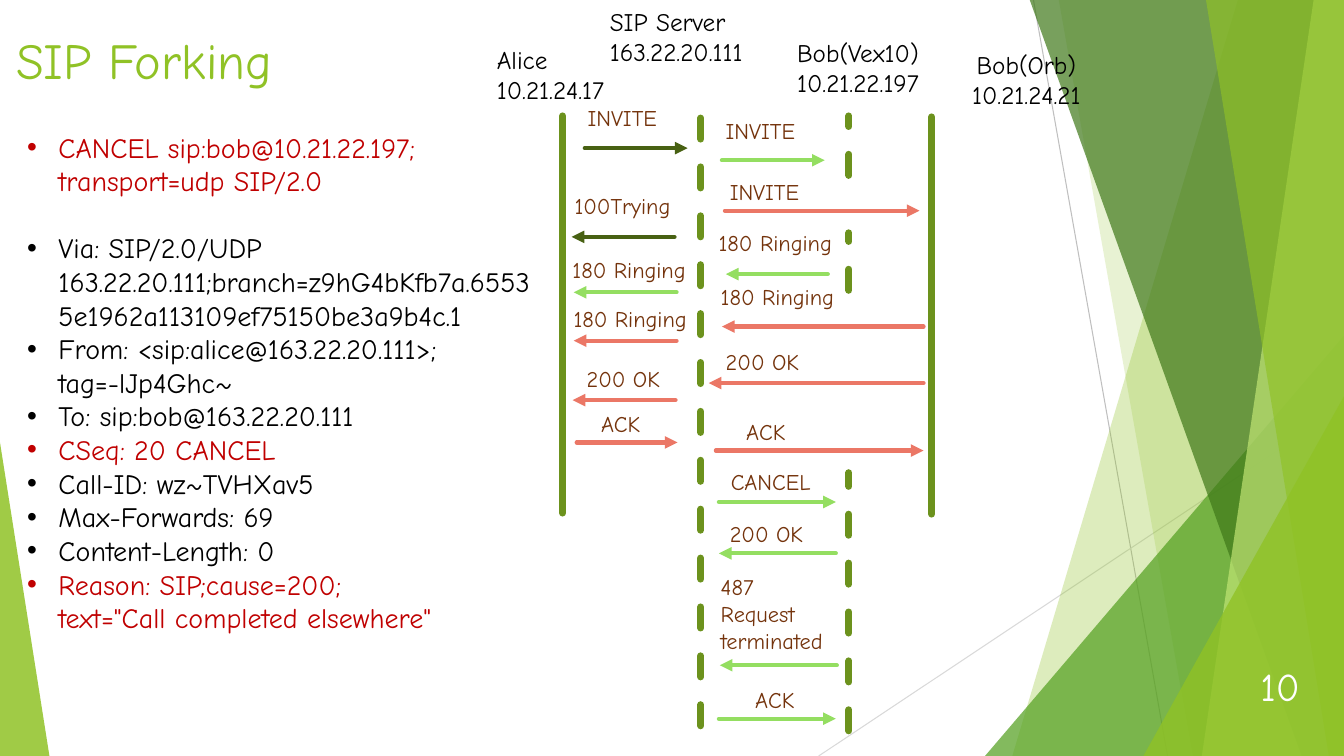
from dataclasses import dataclass

from lxml import etree
from pptx import Presentation
from pptx import util as u
from pptx.dml.color import RGBColor
from pptx.enum import dml, shapes, text
from pptx.oxml.ns import qn

PX = 9144  # EMU in one px: 100 px make an inch
SLIDE_W, SLIDE_H = 1333, 750
LEFT, CENTER, RIGHT = text.PP_ALIGN.LEFT, text.PP_ALIGN.CENTER, text.PP_ALIGN.RIGHT


@dataclass(frozen=True)
class Theme:
    font: str = "Comic Neue"
    lime: str = "90C226"
    pale_lime: str = "C0E474"
    green: str = "54A021"
    deep_green: str = "3F7819"
    gray: str = "BFBFBF"
    light_gray: str = "D9D9D9"
    lifeline: str = "6C921D"
    caller: str = "486113"
    vex: str = "94DE61"
    orb: str = "EB7766"
    label: str = "74330C"
    ink: str = "000000"
    red: str = "C00000"
    white: str = "FFFFFF"
    title_pt: int = 36
    number_pt: int = 28
    list_pt: int = 20
    party_pt: int = 18
    label_pt: int = 16


T = Theme()


@dataclass(frozen=True)
class Band:
    """Facet reaching from a slanted left edge to the right slide edge."""
    top_x: int
    bottom_x: int
    color: str
    opacity: int


@dataclass(frozen=True)
class Corner:
    """Right triangle standing on the bottom slide edge."""
    left: int
    top: int
    width: int
    apex: int
    color: str
    opacity: int


@dataclass(frozen=True)
class Lifeline:
    x: int
    bottom: int
    top: int
    dashed: bool = False


@dataclass(frozen=True)
class Party:
    name: str
    left: int
    top: int
    width: int
    align: text.PP_ALIGN = LEFT


@dataclass(frozen=True)
class Message:
    label: str
    left: int
    top: int
    width: int
    start: int
    end: int
    y: int
    color: str
    align: text.PP_ALIGN = LEFT


@dataclass(frozen=True)
class Header:
    content: str
    color: str = T.ink
    gap_pt: int = 0


FACETS = [
    Band(1228, 1004, T.lime, 30),
    Band(1050, 1183, T.lime, 20),
    Corner(977, 333, 356, 1, T.green, 72),
    Band(1021, 1291, T.deep_green, 70),
    Band(1303, 1192, T.pale_lime, 70),
    Band(1196, 1318, T.lime, 65),
    Corner(1134, 393, 199, 1, T.lime, 80),
    Corner(0, 439, 49, 0, T.lime, 85),
]
LIFELINES = [
    Lifeline(558, 509, 115),
    Lifeline(695, 720, 110, True),
    Lifeline(842, 174, 115, True),
    Lifeline(842, 288, 231, True),
    Lifeline(842, 725, 469, True),
    Lifeline(924, 510, 116),
]
PARTIES = [
    Party("Alice\n10.21.24.17", 483, 39, 170),
    Party("SIP Server\n163.22.20.111", 595, 1, 218),
    Party("Bob(Vex10)\n10.21.22.197", 766, 32, 170, CENTER),
    Party("Bob(Orb)\n10.21.24.21", 943, 44, 150, CENTER),
]
MESSAGES = [
    # Between Alice and the server
    Message("INVITE", 573, 98, 116, 580, 682, 147, T.caller),
    Message("100Trying", 560, 186, 125, 669, 567, 235, T.caller),
    Message("180 Ringing", 558, 249, 153, 671, 569, 290, T.vex),
    Message("180 Ringing", 559, 298, 153, 671, 569, 338, T.orb),
    Message("200 OK", 572, 357, 112, 670, 568, 397, T.orb),
    Message("ACK", 568, 402, 95, 572, 672, 439, T.orb, CENTER),
    # Between the server and Bob's two devices
    Message("INVITE", 710, 111, 116, 716, 818, 159, T.vex),
    Message("INVITE", 714, 172, 116, 719, 912, 209, T.orb),
    Message("180 Ringing", 703, 222, 153, 821, 720, 272, T.vex),
    Message("180 Ringing", 705, 276, 151, 916, 716, 324, T.orb),
    Message("200 OK", 710, 340, 153, 916, 703, 380, T.orb),
    Message("ACK", 706, 410, 107, 710, 916, 447, T.orb, CENTER),
    Message("CANCEL", 715, 460, 107, 713, 829, 498, T.vex),
    Message("200 OK", 714, 511, 116, 829, 713, 549, T.vex),
    Message("487\nRequest\nterminated", 705, 564, 141, 830, 714, 660, T.vex),
    Message("ACK", 715, 676, 107, 713, 829, 713, T.vex, CENTER),
]
HEADERS = [
    Header("CANCEL sip:bob@10.21.22.197;\vtransport=udp SIP/2.0", T.red),
    Header("Via: SIP/2.0/UDP 163.22.20.111;branch=z9hG4bKfb7a.65535e1962a113109ef75150be3a9b4c.1",
           gap_pt=24),
    Header("From: <sip:alice@163.22.20.111>;\vtag=-lJp4Ghc~"),
    Header("To: sip:bob@163.22.20.111"),
    Header("CSeq: 20 CANCEL", T.red),
    Header("Call-ID: wz~TVHXav5"),
    Header("Max-Forwards: 69"),
    Header("Content-Length: 0"),
    Header('Reason: SIP;cause=200;\vtext="Call completed elsewhere"', T.red),
]


def px(value: int) -> u.Emu:
    return u.Emu(value * PX)


def style(paragraph, size: int, color: str, align: text.PP_ALIGN = LEFT) -> None:
    paragraph.alignment = align
    paragraph.font.name = T.font
    paragraph.font.size = u.Pt(size)
    paragraph.font.color.rgb = RGBColor.from_string(color)


def place(placeholder, left: int, top: int, width: int, height: int):
    placeholder.left, placeholder.top = px(left), px(top)
    placeholder.width, placeholder.height = px(width), px(height)
    frame = placeholder.text_frame
    frame.auto_size = text.MSO_AUTO_SIZE.NONE
    frame.vertical_anchor = text.MSO_ANCHOR.TOP
    return frame


def add_line(slide, start: tuple, end: tuple, color: str, weight: float,
             dashed: bool = False, arrow: bool = False) -> None:
    line = slide.shapes.add_connector(shapes.MSO_CONNECTOR.STRAIGHT,
                                      *map(px, start + end))
    line.line.color.rgb = RGBColor.from_string(color)
    line.line.width = u.Pt(weight)
    if dashed:
        line.line.dash_style = dml.MSO_LINE.DASH
    properties = line._element.spPr
    outline = properties.find(qn("a:ln"))
    outline.set("cap", "rnd")
    if arrow:
        etree.SubElement(outline, qn("a:tailEnd"), type="triangle")
    etree.SubElement(properties, qn("a:effectLst"))


def add_facet(slide, facet: Band | Corner) -> None:
    if isinstance(facet, Band):
        builder = slide.shapes.build_freeform(facet.top_x, -1, scale=PX)
        builder.add_line_segments([(SLIDE_W, -1), (SLIDE_W, SLIDE_H),
                                   (facet.bottom_x, SLIDE_H)], close=True)
        shape = builder.convert_to_shape()
    else:
        shape = slide.shapes.add_shape(
            shapes.MSO_SHAPE.ISOSCELES_TRIANGLE, px(facet.left), px(facet.top),
            px(facet.width), px(SLIDE_H - facet.top))
        shape.adjustments[0] = facet.apex
    shape.shadow.inherit = False
    shape.line.fill.background()
    shape.fill.solid()
    shape.fill.fore_color.rgb = RGBColor.from_string(facet.color)
    tint = shape._element.spPr.find(qn("a:solidFill")).find(qn("a:srgbClr"))
    etree.SubElement(tint, qn("a:alpha"), val=str(facet.opacity * 1000))


def add_text(slide, content: str, left: int, top: int, width: int, height: int,
             size: int, color: str, align: text.PP_ALIGN = LEFT):
    frame = slide.shapes.add_textbox(px(left), px(top), px(width), px(height)).text_frame
    frame.word_wrap = True
    frame.text = content
    for paragraph in frame.paragraphs:
        style(paragraph, size, color, align)
    return frame


def add_headers(frame) -> None:
    for index, header in enumerate(HEADERS):
        paragraph = frame.add_paragraph() if index else frame.paragraphs[0]
        paragraph.text = header.content
        style(paragraph, T.list_pt, header.color)
        paragraph.space_before = u.Pt(header.gap_pt)
        indent = paragraph._p.get_or_add_pPr()
        indent.set("marL", str(px(31)))
        indent.set("indent", str(-px(31)))


def main() -> None:
    deck = Presentation()
    deck.slide_width, deck.slide_height = px(SLIDE_W), px(SLIDE_H)
    slide = deck.slides.add_slide(deck.slide_layouts[1])
    title, sip_headers = slide.placeholders

    # Faceted backdrop, kept behind the placeholders
    add_line(slide, (1025, 0), (1158, SLIDE_H), T.gray, 0.75)
    add_line(slide, (SLIDE_W, 403), (812, SLIDE_H), T.light_gray, 0.75)
    for facet in FACETS:
        add_facet(slide, facet)
    for placeholder in (title, sip_headers):
        slide.shapes._spTree.append(placeholder._element)

    # Title and SIP header list
    heading = place(title, 6, 24, 672, 109)
    heading.text = "SIP Forking"
    style(heading.paragraphs[0], T.title_pt, T.lime)
    add_headers(place(sip_headers, 17, 124, 520, 609))

    # Sequence diagram
    for life in LIFELINES:
        add_line(slide, (life.x, life.bottom), (life.x, life.top), T.lifeline, 5, life.dashed)
    for party in PARTIES:
        add_text(slide, party.name, party.left, party.top, party.width, 71,
                 T.party_pt, T.ink, party.align)
    for msg in MESSAGES:
        add_line(slide, (msg.start, msg.y), (msg.end, msg.y), msg.color, 3, arrow=True)
        add_text(slide, msg.label, msg.left, msg.top, msg.width,
                 10 + 27 * len(msg.label.split("\n")), T.label_pt, T.label, msg.align)

    # Slide number
    number = add_text(slide, "10", 1166, 636, 133, 89, T.number_pt, T.white, RIGHT)
    number.vertical_anchor = text.MSO_ANCHOR.MIDDLE
    deck.save("out.pptx")


if __name__ == "__main__":
    main()
